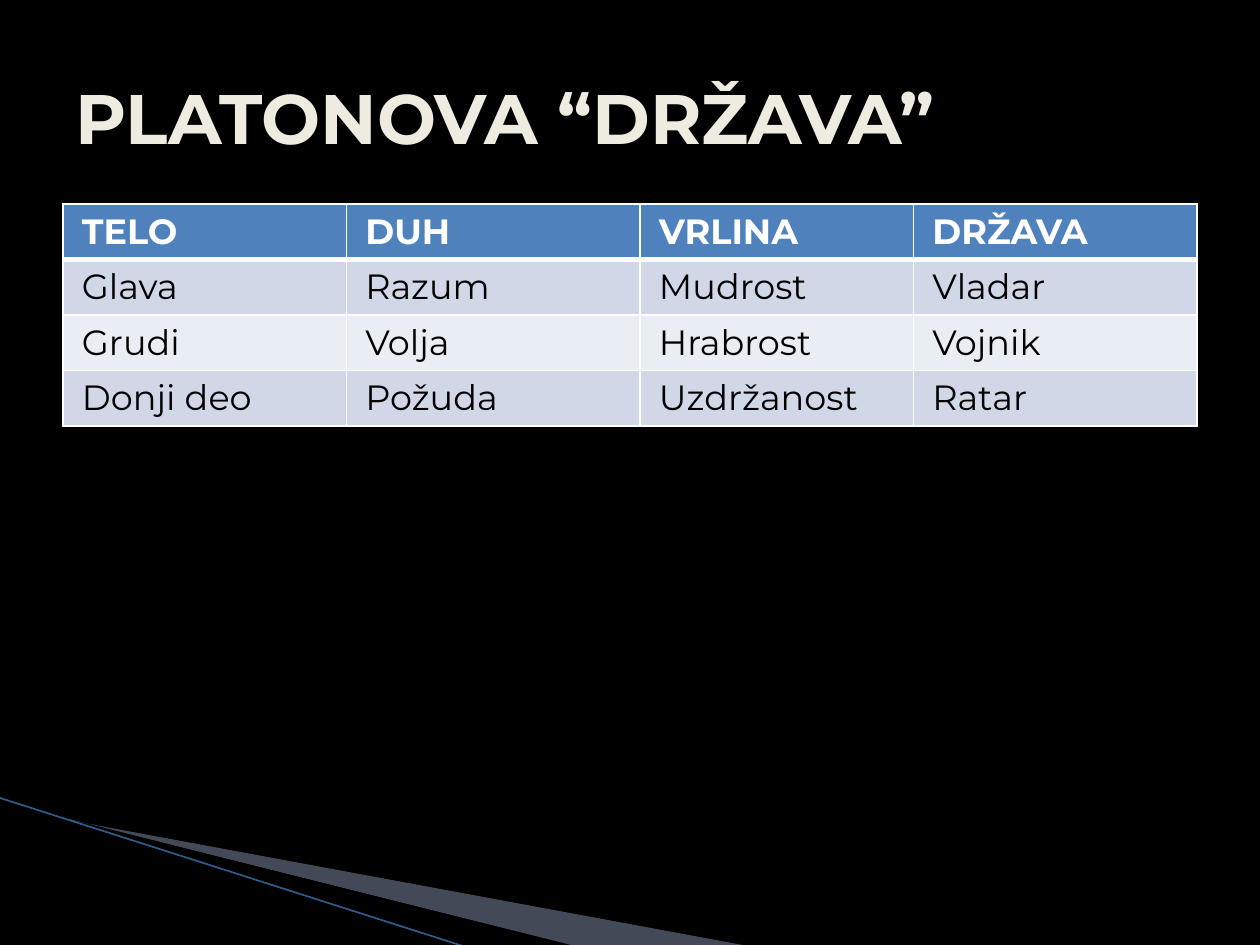
import pptx
import pptx.util
import pptx.dml.color
import pptx.enum.shapes
import pptx.enum.text
import pptx.oxml
from pptx.oxml.ns import nsdecls, qn

Inches, Pt = pptx.util.Inches, pptx.util.Pt

TITLE = "PLATONOVA “DRŽAVA”"
ROWS = [
    ("TELO", "DUH", "VRLINA", "DRŽAVA"),
    ("Glava", "Razum", "Mudrost", "Vladar"),
    ("Grudi", "Volja", "Hrabrost", "Vojnik"),
    ("Donji deo", "Požuda", "Uzdržanost", "Ratar"),
]
COLUMN_WIDTHS = [2.25, 2.33, 2.17, 2.25]
ROW_HEIGHT = 0.41
FONT = "Montserrat"
COLORS = {
    "background": "000000", "title": "EEECE1", "header": "4F81BD",
    "band_dark": "D0D8E8", "band_light": "E9EDF4", "border": "FFFFFF",
    "header_text": "FFFFFF", "body_text": "000000",
    "wedge": "A7B9DB", "accent_line": "305C8C",
}
# frame (left, top, width, height), corner points, colour, opacity in percent
WEDGES = [
    ((0.78, 5.47, 4.16, 1.58),
     [(0.55, 6.51), (5.95, 7.51), (4.56, 7.51), (0.55, 6.5)], "wedge", 40),
    ((-0.06, 6.33, 4.16, 0.92),
     [(0.53, 6.5), (4.57, 7.51), (3.72, 7.52), (0.54, 6.5)], "background", 100),
]
ACCENT_LINE = [(-0.01, 6.33), (3.71, 7.52)]


def rgb(name):
    return pptx.dml.color.RGBColor.from_string(COLORS[name])


def paint(fill, name):
    fill.solid()
    fill.fore_color.rgb = rgb(name)


def style_text(frame, size, color, bold):
    font = frame.paragraphs[0].runs[0].font
    font.name, font.size, font.bold = FONT, Pt(size), bold
    font.color.rgb = rgb(color)


def set_frame(shape, frame):
    """Give a freeform its frame while its corners stay where they are."""
    left, top, width, height = (Inches(value) for value in frame)
    outline = next(shape._element.iter(qn("a:path")))
    for point in outline.iter(qn("a:pt")):
        point.set("x", str(int(point.get("x")) + shape.left - left))
        point.set("y", str(int(point.get("y")) + shape.top - top))
    outline.set("w", str(width))
    outline.set("h", str(height))
    shape.left, shape.top, shape.width, shape.height = left, top, width, height


def add_wedge(page, frame, points, color, opacity):
    corners = [(Inches(x), Inches(y)) for x, y in points]
    builder = page.shapes.build_freeform(*corners[0])
    builder.add_line_segments(corners[1:], close=True)
    wedge = builder.convert_to_shape()
    set_frame(wedge, frame)
    wedge.shadow.inherit = False
    wedge.line.fill.background()
    paint(wedge.fill, color)
    if opacity < 100:
        tint = wedge._element.spPr.find(qn("a:solidFill"))[0]
        tint.append(pptx.oxml.parse_xml(
            f'<a:alpha {nsdecls("a")} val="{opacity * 1000}"/>'))


def set_borders(cell, widths):
    """Put the border lines, keyed L, R, T, B in points, ahead of the cell fill."""
    properties = cell._tc.get_or_add_tcPr()
    for index, (side, width) in enumerate(widths.items()):
        properties.insert(index, pptx.oxml.parse_xml(
            f'<a:ln{side} {nsdecls("a")} w="{Pt(width)}"><a:solidFill>'
            f'<a:srgbClr val="{COLORS["border"]}"/></a:solidFill></a:ln{side}>'))


def add_table(page):
    table = page.shapes.add_table(
        len(ROWS), len(COLUMN_WIDTHS), Inches(0.5), Inches(1.62),
        Inches(sum(COLUMN_WIDTHS)), Inches(ROW_HEIGHT * len(ROWS))).table
    for column, width in zip(table.columns, COLUMN_WIDTHS):
        column.width = Inches(width)
    for r, texts in enumerate(ROWS):
        header = r == 0
        band = "header" if header else ("band_light", "band_dark")[r % 2]
        for c, text in enumerate(texts):
            cell = table.cell(r, c)
            cell.text_frame.text = text
            cell.margin_left = cell.margin_right = Inches(0.15)
            cell.margin_top = cell.margin_bottom = Inches(0.05)
            style_text(cell.text_frame, 20,
                       "header_text" if header else "body_text", header)
            paint(cell.fill, band)
            set_borders(cell, {"L": 1, "R": 1, "T": 3 if r == 1 else 1,
                               "B": 3 if header else 1})


def main():
    deck = pptx.Presentation()
    deck.slide_width, deck.slide_height = Inches(10), Inches(7.5)
    page = deck.slides.add_slide(deck.slide_layouts[6])
    paint(page.background.fill, "background")

    for wedge in WEDGES:
        add_wedge(page, *wedge)

    start, end = ACCENT_LINE
    line = page.shapes.add_connector(
        pptx.enum.shapes.MSO_CONNECTOR.STRAIGHT,
        *(Inches(value) for value in start + end))
    line.line.color.rgb = rgb("accent_line")
    line.line.width = Pt(0.95)
    line._element.spPr.append(
        pptx.oxml.parse_xml(f'<a:effectLst {nsdecls("a")}/>'))

    add_table(page)

    title = page.shapes.add_textbox(
        Inches(0.5), Inches(0.3), Inches(9), Inches(1.25)).text_frame
    title.word_wrap = True
    title.vertical_anchor = pptx.enum.text.MSO_ANCHOR.MIDDLE
    title.text = TITLE
    style_text(title, 40, "title", True)

    deck.save("out.pptx")


if __name__ == "__main__":
    main()
